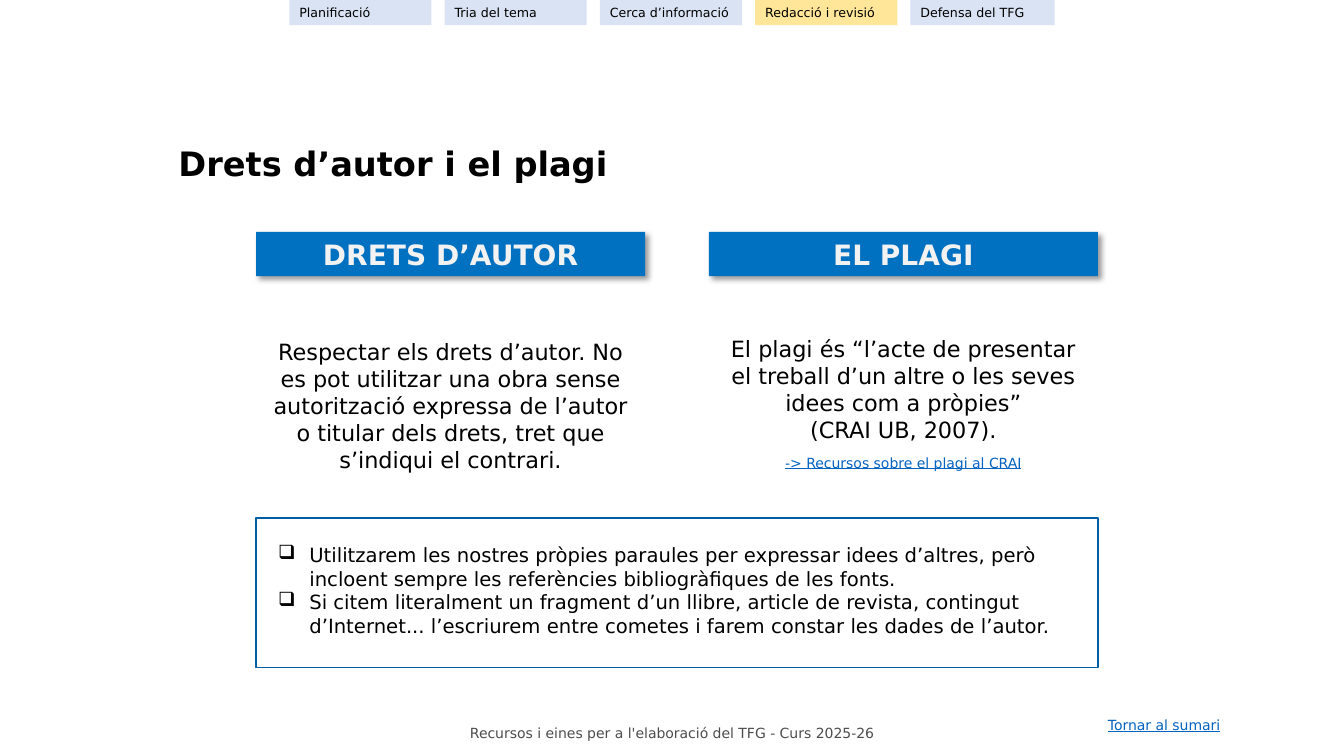
from pptx import Presentation
from pptx.dml.color import RGBColor
from pptx.enum.shapes import MSO_SHAPE as Shape
from pptx.enum.text import MSO_ANCHOR as Anchor, PP_ALIGN as Align
from pptx.oxml import parse_xml
from pptx.oxml.ns import nsdecls
from pptx.util import Inches, Pt

FONT = "DejaVu Sans"
BLACK, LINK, BLUE = "000000", "0563C1", "0070C0"


def rgb(value):
    return RGBColor.from_string(value)


class SlideBuilder:
    """Holds the text style and the current slide, and adds elements to it."""

    def __init__(self, prs, font):
        self.font = font
        self.slide = prs.slides.add_slide(prs.slide_layouts[5])

    def paragraph(self, tf, text, size, color=BLACK, bold=False,
                  underline=False, align=Align.LEFT, before=0, first=True):
        p = tf.paragraphs[0] if first else tf.add_paragraph()
        p.alignment = align
        p.space_before = Pt(before)
        r = p.add_run()
        r.text = text
        r.font.name, r.font.size = self.font, Pt(size)
        r.font.bold, r.font.underline = bold, underline
        r.font.color.rgb = rgb(color)
        return p

    def frame(self, sp, anchor):
        tf = sp.text_frame
        tf.word_wrap = True
        tf.vertical_anchor = anchor
        return tf

    def title(self, box, text, size):
        sp = self.slide.shapes.title
        sp.left, sp.top, sp.width, sp.height = map(Inches, box)
        self.paragraph(self.frame(sp, Anchor.TOP), text, size, bold=True)

    def text(self, box, text, size, **style):
        sp = self.slide.shapes.add_textbox(*map(Inches, box))
        tf = self.frame(sp, Anchor.TOP)
        self.paragraph(tf, text, size, **style)
        return tf

    def bullets(self, box, items, size, indent):
        tf = self.frame(self.slide.shapes.add_textbox(*map(Inches, box)), Anchor.TOP)
        for i, item in enumerate(items):
            p = self.paragraph(tf, item, size, first=i == 0)
            pPr = p._p.get_or_add_pPr()
            pPr.set("marL", str(Inches(indent)))
            pPr.set("indent", str(-Inches(indent)))
            pPr.append(parse_xml(f'<a:buChar {nsdecls("a")} char="❑"/>'))

    def rect(self, box, fill=None, line=None):
        sp = self.slide.shapes.add_shape(Shape.RECTANGLE, *map(Inches, box))
        sp.shadow.inherit = False
        if fill:
            sp.fill.solid()
            sp.fill.fore_color.rgb = rgb(fill)
        else:
            sp.fill.background()
        if line:
            sp.line.color.rgb = rgb(line)
            sp.line.width = Pt(1)
        else:
            sp.line.fill.background()
        return sp

    def label(self, box, fill, text, size, **style):
        sp = self.rect(box, fill)
        self.paragraph(self.frame(sp, Anchor.MIDDLE), text, size, **style)
        return sp

    def heading(self, box, text):
        sp = self.label(box, BLUE, text, 20, color="F2F2F2", bold=True,
                        align=Align.CENTER)
        effects = sp._element.spPr.find(
            "{http://schemas.openxmlformats.org/drawingml/2006/main}effectLst")
        effects.append(parse_xml(
            f'<a:outerShdw {nsdecls("a")} blurRad="{Pt(4)}" dist="{Pt(3)}" '
            'dir="2700000" algn="tl" rotWithShape="0"><a:srgbClr val="000000">'
            '<a:alpha val="40000"/></a:srgbClr></a:outerShdw>'))


def main():
    prs = Presentation()
    prs.slide_width, prs.slide_height = Inches(13.33), Inches(7.5)
    s = SlideBuilder(prs, FONT)
    left, right, column = 2.54, 7.03, 3.86
    center = Align.CENTER

    s.text((3.75, 7.14, 5.83, 0.27),
           "Recursos i eines per a l'elaboració del TFG - Curs 2025-26",
           10, color="4D4D4D", align=center)
    s.text((10.89, 7.06, 1.36, 0.27), "Tornar al sumari", 10,
           color=LINK, underline=True)
    s.title((1.67, 1.37, 8.35, 0.5), "Drets d’autor i el plagi", 24)

    for x, heading in ((left, "DRETS D’AUTOR"), (right, "EL PLAGI")):
        s.heading((x, 2.3, column, 0.44), heading)

    s.text((left, 3.31, column, 1.45),
           "Respectar els drets d’autor. No es pot utilitzar una obra sense "
           "autorització expressa de l’autor o titular dels drets, tret que "
           "s’indiqui el contrari.", 16, align=center)
    tf = s.text((right, 3.28, column, 1.46),
                "El plagi és “l’acte de presentar el treball d’un altre o les "
                "seves idees com a pròpies”", 16, align=center)
    s.paragraph(tf, "(CRAI UB, 2007).", 16, align=center, first=False)
    s.paragraph(tf, "-> Recursos sobre el plagi al CRAI", 10, color=LINK,
                underline=True, align=center, before=8, first=False)

    s.rect((left, 5.14, 8.35, 1.48), line="005EA4")
    s.bullets((2.66, 5.34, 8.11, 1.04), (
        "Utilitzarem les nostres pròpies paraules per expressar idees d’altres, "
        "però incloent sempre les referències bibliogràfiques de les fonts.",
        "Si citem literalment un fragment d’un llibre, article de revista, "
        "contingut d’Internet... l’escriurem entre cometes i farem constar les "
        "dades de l’autor."), 14, 0.31)

    steps = ("Planificació", "Tria del tema", "Cerca d’informació",
             "Redacció i revisió", "Defensa del TFG")
    current = "Redacció i revisió"
    for i, step in enumerate(steps):
        width = 1.43 if step == steps[-1] else 1.41
        s.label((2.87 + 1.54 * i, 0, width, 0.25),
                "FFE699" if step == current else "DAE3F3", step, 9)

    prs.save("out.pptx")


if __name__ == "__main__":
    main()
